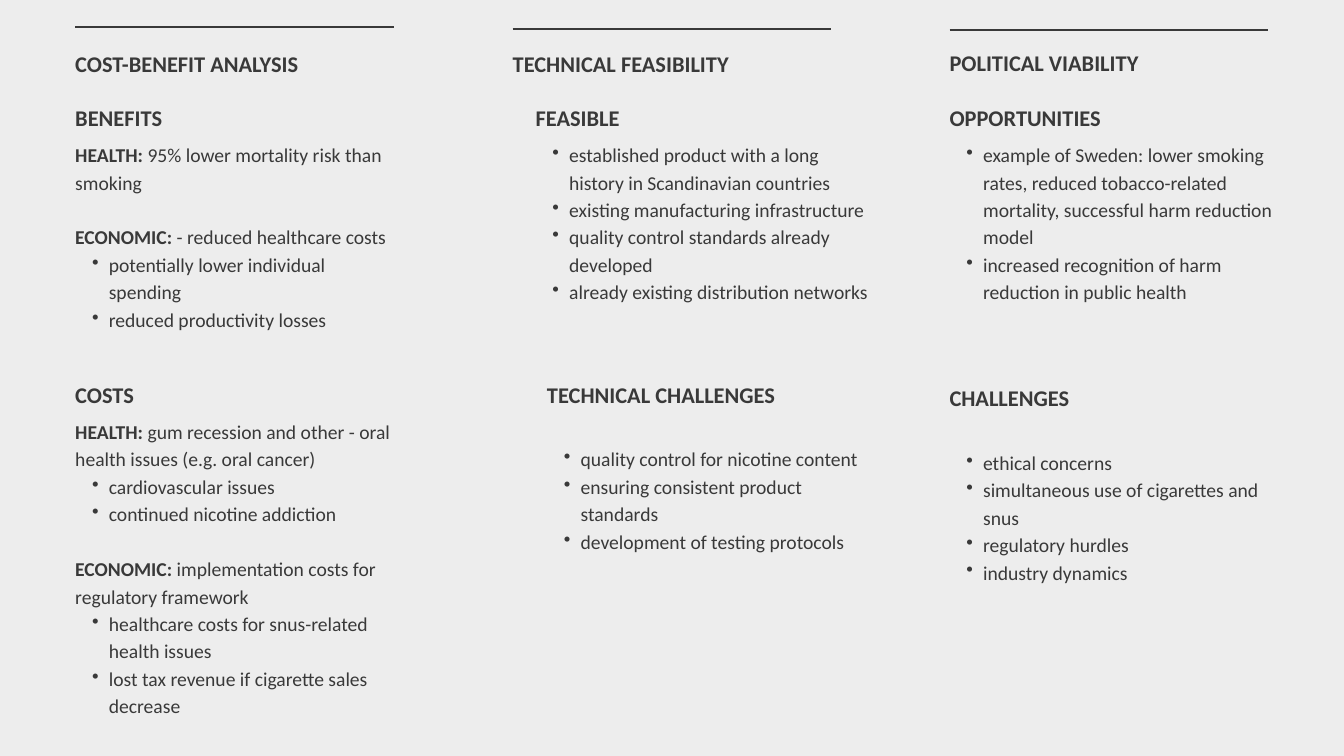
import pptx
import pptx.util
import pptx.dml.color
import pptx.enum.shapes
import pptx.enum.text
import pptx.oxml.ns
from dataclasses import dataclass
from lxml import etree

Inches = pptx.util.Inches
Pt = pptx.util.Pt


@dataclass(frozen=True)
class Theme:
    background: str = "EDEDED"
    ink: str = "393939"
    font: str = "Calibri"
    heading_size: float = 24
    heading_leading: float = 28.8
    body_size: float = 21
    body_leading: float = 29.4
    rule_width: float = 2.25


THEME = Theme()
INK = pptx.dml.color.RGBColor.from_string(THEME.ink)
HEADING_HEIGHT = 0.4
BODY_OFFSET = 0.52
LINE_HEIGHT = THEME.body_leading / 72
COLUMN_WIDTH = 4.74

# Column left, rule top, title top, title
COLUMNS = [
    (1.12, 0.4, 0.75, "COST-BENEFIT ANALYSIS"),
    (7.63, 0.43, 0.75, "TECHNICAL FEASIBILITY"),
    (14.13, 0.45, 0.73, "POLITICAL VIABILITY"),
]

# Left, top, width, body height, blank lines under the heading, heading, body.
# A (label, text) pair is a lead paragraph; a plain string is a bullet.
SECTIONS = [
    (1.12, 1.55, 4.74, 3.64, 0, "BENEFITS", [
        ("HEALTH:", " 95% lower mortality risk than smoking"),
        ("ECONOMIC:", " - reduced healthcare costs"),
        "potentially lower individual spending",
        "reduced productivity losses",
    ]),
    (1.12, 5.67, 4.74, 4.86, 0, "COSTS", [
        ("HEALTH:", " gum recession and other - oral health issues (e.g. oral cancer)"),
        "cardiovascular issues",
        "continued nicotine addiction",
        ("ECONOMIC:", " implementation costs for regulatory framework"),
        "healthcare costs for snus-related health issues",
        "lost tax revenue if cigarette sales decrease",
    ]),
    (7.97, 1.55, 5.08, 3.24, 0, "FEASIBLE", [
        "established product with a long history in Scandinavian countries",
        "existing manufacturing infrastructure",
        "quality control standards already developed",
        "already existing distribution networks",
    ]),
    (8.14, 5.67, 4.74, 2.42, 1, "TECHNICAL CHALLENGES", [
        "quality control for nicotine content",
        "ensuring consistent product standards",
        "development of testing protocols",
    ]),
    (14.13, 1.55, 5.08, 2.43, 0, "OPPORTUNITIES", [
        "example of Sweden: lower smoking rates, reduced tobacco-related "
        "mortality, successful harm reduction model",
        "increased recognition of harm reduction in public health",
    ]),
    (14.13, 5.72, 4.74, 2.02, 1, "CHALLENGES", [
        "ethical concerns",
        "simultaneous use of cigarettes and snus",
        "regulatory hurdles",
        "industry dynamics",
    ]),
]


def add_rule(slide, left, top):
    line = slide.shapes.add_connector(
        pptx.enum.shapes.MSO_CONNECTOR.STRAIGHT,
        Inches(left), Inches(top), Inches(left + COLUMN_WIDTH), Inches(top))
    line.line.color.rgb = INK
    line.line.width = Pt(THEME.rule_width)
    sp_pr = line._element.spPr
    etree.SubElement(sp_pr, pptx.oxml.ns.qn("a:effectLst"))


def add_text_frame(slide, left, top, width, height):
    box = slide.shapes.add_textbox(
        Inches(left), Inches(top), Inches(width), Inches(height))
    tf = box.text_frame
    tf.margin_left = tf.margin_right = tf.margin_top = tf.margin_bottom = 0
    tf.word_wrap = True
    tf.auto_size = pptx.enum.text.MSO_AUTO_SIZE.SHAPE_TO_FIT_TEXT
    return tf


def style_paragraph(p, size, leading):
    p.font.name = THEME.font
    p.font.size = Pt(size)
    p.font.color.rgb = INK
    p.line_spacing = Pt(leading)


def add_heading(slide, left, top, width, text):
    tf = add_text_frame(slide, left, top, width, HEADING_HEIGHT)
    p = tf.paragraphs[0]
    p.text = text
    style_paragraph(p, THEME.heading_size, THEME.heading_leading)
    p.font.bold = True


def make_bullet(p):
    p.level = 1
    p_pr = p._p.get_or_add_pPr()
    p_pr.set("marL", str(Inches(0.5)))
    p_pr.set("indent", str(Inches(-0.25)))
    bullet = etree.Element(pptx.oxml.ns.qn("a:buChar"), char="•")
    p_pr.find(pptx.oxml.ns.qn("a:defRPr")).addprevious(bullet)


def add_body(slide, left, top, width, height, items):
    tf = add_text_frame(slide, left, top, width, height)
    for i, item in enumerate(items):
        p = tf.add_paragraph() if i else tf.paragraphs[0]
        style_paragraph(p, THEME.body_size, THEME.body_leading)
        if isinstance(item, str):
            p.text = item
            make_bullet(p)
        else:
            for text, bold in zip(item, (True, False)):
                r = p.add_run()
                r.text = text
                r.font.bold = bold
            if i:
                p.space_before = Pt(THEME.body_leading)


def main():
    prs = pptx.Presentation()
    prs.slide_width, prs.slide_height = Inches(20), Inches(11.25)
    slide = prs.slides.add_slide(prs.slide_layouts[6])
    fill = slide.background.fill
    fill.solid()
    fill.fore_color.rgb = pptx.dml.color.RGBColor.from_string(THEME.background)

    for left, rule_top, title_top, title in COLUMNS:
        add_rule(slide, left, rule_top)
        add_heading(slide, left, title_top, COLUMN_WIDTH, title)
    for left, top, width, height, blank_lines, heading, items in SECTIONS:
        add_heading(slide, left, top, width, heading)
        body_top = top + BODY_OFFSET + blank_lines * LINE_HEIGHT
        add_body(slide, left, body_top, width, height, items)
    prs.save("out.pptx")


if __name__ == "__main__":
    main()
